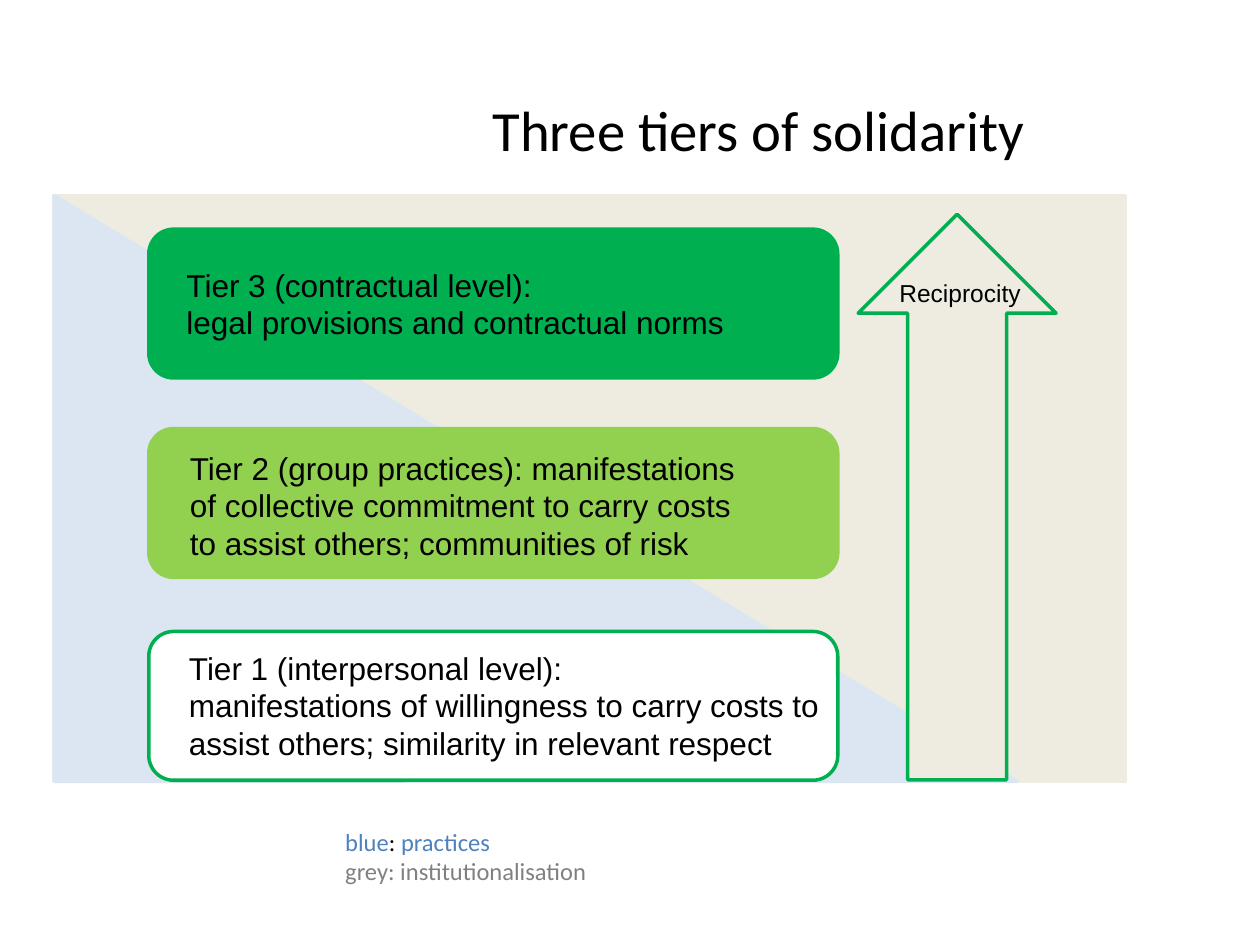
from dataclasses import dataclass

from pptx import Presentation
from pptx.dml.color import RGBColor
from pptx.enum.shapes import MSO_SHAPE
from pptx.enum.text import MSO_ANCHOR, PP_ALIGN
from pptx.util import Cm, Pt


@dataclass(frozen=True)
class Theme:
    black: str = "000000"
    white: str = "FFFFFF"
    beige: str = "EEECE1"
    pale_blue: str = "DCE6F2"
    green: str = "00B050"
    light_green: str = "92D050"
    blue: str = "4F81BD"
    grey: str = "808080"
    title_size: float = 32.4
    tier_size: float = 18
    note_size: float = 14
    outline: float = 2
    body_font: str = "Arial"
    title_font: str = "Calibri"


THEME = Theme()

TIERS = [
    (12.73, THEME.white, (3.56, 12.95, 13.34, 2.57),
     ["Tier 1 (interpersonal level):",
      "manifestations of willingness to carry costs to assist others; "
      "similarity in relevant respect"]),
    (8.64, THEME.light_green, (3.58, 8.92, 11.99, 2.57),
     ["Tier 2 (group practices): manifestations of collective commitment "
      "to carry costs to assist others; communities of risk"]),
    (4.62, THEME.green, (3.51, 5.23, 13.79, 1.8),
     ["Tier 3 (contractual level):",
      "legal provisions and contractual norms"]),
]

LEGEND = [
    [("blue", THEME.blue), (": ", THEME.black), ("practices", THEME.blue)],
    [("grey: institutionalisation", THEME.grey)],
]


def style_run(r, size, font, color):
    r.font.size = Pt(size)
    r.font.name = font
    r.font.color.rgb = RGBColor.from_string(color)


def set_title(s, box, text):
    sp = s.shapes.title
    sp.left, sp.top, sp.width, sp.height = map(Cm, box)
    tf = sp.text_frame
    tf.text = text
    tf.vertical_anchor = MSO_ANCHOR.MIDDLE
    p = tf.paragraphs[0]
    p.alignment = PP_ALIGN.CENTER
    style_run(p.runs[0], THEME.title_size, THEME.title_font, THEME.black)


def add_block(s, kind, box, fill, line):
    sp = s.shapes.add_shape(kind, *map(Cm, box))
    sp.shadow.inherit = False
    sp.fill.solid()
    sp.fill.fore_color.rgb = RGBColor.from_string(fill)
    sp.line.color.rgb = RGBColor.from_string(line)
    sp.line.width = Pt(THEME.outline)


def add_text(s, box, paragraphs, size, font):
    tf = s.shapes.add_textbox(*map(Cm, box)).text_frame
    tf.word_wrap = True
    for i, parts in enumerate(paragraphs):
        p = tf.add_paragraph() if i else tf.paragraphs[0]
        for text, color in parts:
            r = p.add_run()
            r.text = text
            style_run(r, size, font, color)


def add_tier(s, top, fill, text_box, lines):
    line = THEME.green if fill == THEME.white else fill
    add_block(s, MSO_SHAPE.ROUNDED_RECTANGLE, (3, top, 13.89, 3), fill, line)
    add_text(s, text_box, [[(text, THEME.black)] for text in lines],
             THEME.tier_size, THEME.body_font)


def main():
    prs = Presentation()
    prs.slide_width, prs.slide_height = Cm(25.4), Cm(19.05)
    s = prs.slides.add_slide(prs.slide_layouts[5])
    set_title(s, (4.09, 1.93, 22.4, 1.32), "Three tiers of solidarity")

    add_block(s, MSO_SHAPE.RECTANGLE, (1.09, 3.94, 21.59, 11.81),
              THEME.beige, THEME.beige)
    add_block(s, MSO_SHAPE.RIGHT_TRIANGLE, (1.09, 3.94, 19.41, 11.81),
              THEME.pale_blue, THEME.pale_blue)
    for tier in TIERS:
        add_tier(s, *tier)

    add_block(s, MSO_SHAPE.UP_ARROW, (17.3, 4.32, 3.99, 11.4),
              THEME.beige, THEME.green)
    add_text(s, (17.88, 5.49, 3.68, 1.45), [[("Reciprocity", THEME.black)]],
             THEME.note_size, THEME.body_font)
    add_text(s, (6.71, 16.54, 16, 1.45), LEGEND,
             THEME.note_size, THEME.title_font)
    prs.save("out.pptx")


if __name__ == "__main__":
    main()
